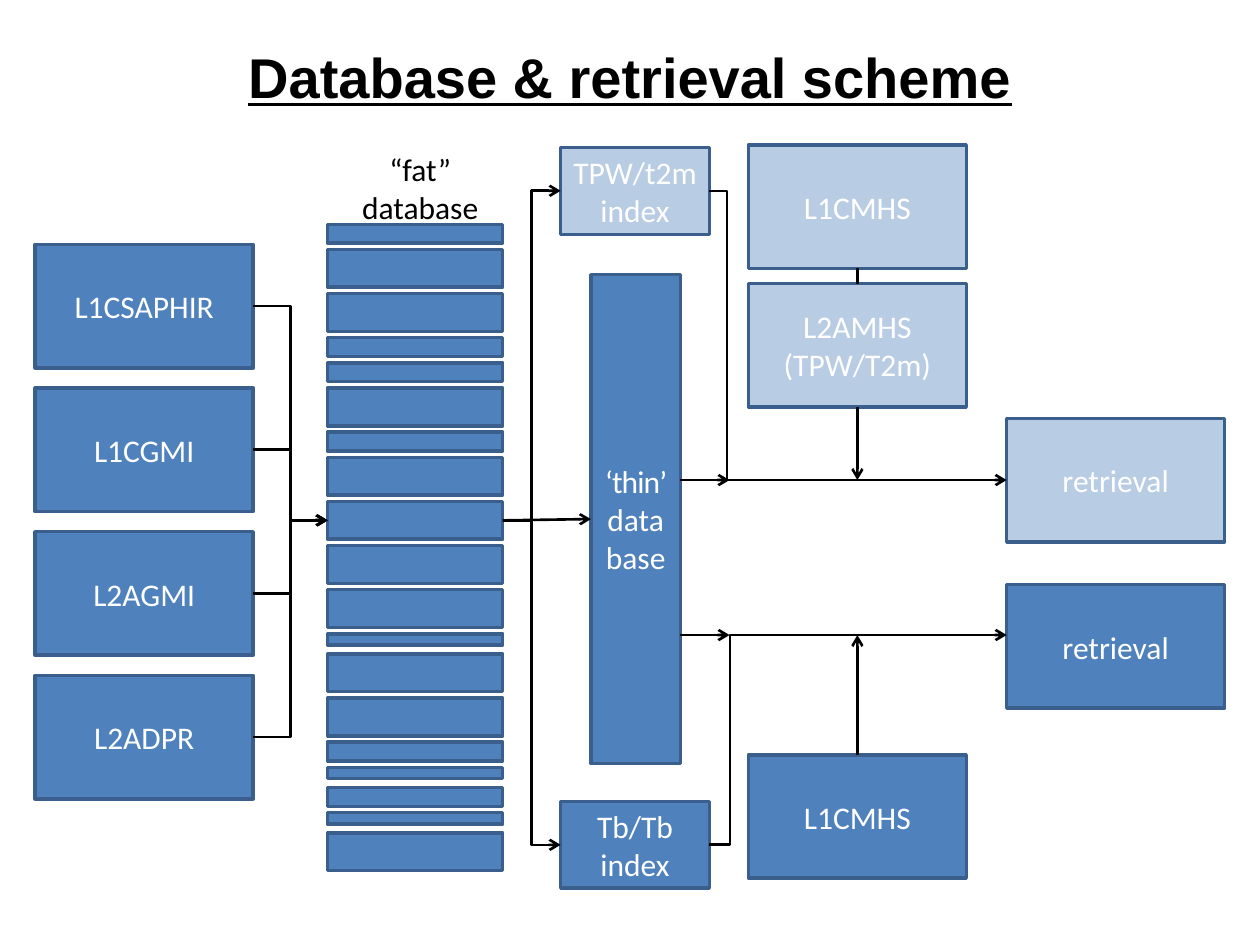
import lxml.etree
import pptx
import pptx.dml.color
import pptx.enum.shapes
import pptx.enum.text
import pptx.oxml.ns
import pptx.util

Inches = pptx.util.Inches
qn = pptx.oxml.ns.qn

BLUE = pptx.dml.color.RGBColor(0x4F, 0x81, 0xBD)
EDGE = pptx.dml.color.RGBColor(0x3A, 0x5F, 0x8C)
WHITE = pptx.dml.color.RGBColor(0xFF, 0xFF, 0xFF)
BLACK = pptx.dml.color.RGBColor(0x00, 0x00, 0x00)

TOP, LEFT, BOTTOM, RIGHT = range(4)
SIDE_POINTS = {TOP: (0.5, 0), LEFT: (0, 0.5), BOTTOM: (0.5, 1), RIGHT: (1, 0.5)}
BOX_WIDTH, BOX_HEIGHT = Inches(1.73), Inches(0.98)
ROW_PITCHES = {0.3: 0.35, 0.15: 0.2, 0.09: 0.16}
ROW_HEIGHTS = [0.15, 0.3, 0.3, 0.15, 0.15, 0.3, 0.15, 0.3, 0.3, 0.3,
               0.3, 0.09, 0.3, 0.3, 0.15, 0.09, 0.15, 0.09, 0.3]
MIDDLE_ROW = 8


def write_text(frame, text, size=18, font="Calibri", color=WHITE, bold=None,
               underline=None, tight_lead="", wrap=True,
               anchor=pptx.enum.text.MSO_ANCHOR.MIDDLE):
    """Write centred paragraphs, optionally led by a run with tighter spacing."""
    frame.word_wrap = wrap
    frame.vertical_anchor = anchor
    for index, line in enumerate(text.split("\n")):
        paragraph = frame.add_paragraph() if index else frame.paragraphs[0]
        paragraph.alignment = pptx.enum.text.PP_ALIGN.CENTER
        for part in filter(None, ("" if index else tight_lead, line)):
            run = paragraph.add_run()
            run.text = part
            run.font.size = pptx.util.Pt(size)
            run.font.name = font
            run.font.color.rgb = color
            run.font.bold = bold
            run.font.underline = underline
    if tight_lead:
        frame.paragraphs[0].runs[0].font._element.set("spc", "-50")


def add_box(slide, left, top, width, height, text="", faded=False, **text_format):
    """Add an outlined blue rectangle, faded to 40% opacity on request."""
    box = slide.shapes.add_shape(
        pptx.enum.shapes.MSO_SHAPE.RECTANGLE, left, top, width, height)
    box.shadow.inherit = False
    box.fill.solid()
    box.fill.fore_color.rgb = BLUE
    box.line.color.rgb = EDGE
    box.line.width = pptx.util.Pt(2)
    if faded:
        color = box._element.spPr.find(qn("a:solidFill")).find(qn("a:srgbClr"))
        lxml.etree.SubElement(color, qn("a:alpha")).set("val", "40000")
    if text:
        write_text(box.text_frame, text, **text_format)
    return box


def locate(end):
    """Return the point of an end given as (box, side) or as (x, y)."""
    if not hasattr(end[0], "text_frame"):
        return end
    box, side = end
    across, down = SIDE_POINTS[side]
    return int(box.left + box.width * across), int(box.top + box.height * down)


def add_link(slide, start, end, bend=None, arrow=True):
    """Link two ends with a straight line, or with an elbow turning at bend."""
    kinds = pptx.enum.shapes.MSO_CONNECTOR
    kind = kinds.STRAIGHT if bend is None else kinds.ELBOW
    link = slide.shapes.add_connector(kind, *locate(start), *locate(end))
    if hasattr(start[0], "text_frame"):
        link.begin_connect(*start)
    if hasattr(end[0], "text_frame"):
        link.end_connect(*end)
    link.line.color.rgb = BLACK
    link.line.width = pptx.util.Pt(1.5)
    properties = link._element.spPr
    if bend is not None:
        adjustments = properties.find(qn("a:prstGeom")).get_or_add_avLst()
        guide = lxml.etree.SubElement(adjustments, qn("a:gd"))
        guide.set("name", "adj1")
        guide.set("fmla", f"val {round(bend * 100000)}")
    if arrow:
        outline = properties.find(qn("a:ln"))
        lxml.etree.SubElement(outline, qn("a:tailEnd")).set("type", "arrow")
    lxml.etree.SubElement(properties, qn("a:effectLst"))


def add_title(slide, left, top, width, height):
    """Place the underlined heading."""
    title = slide.shapes.add_textbox(left, top, width, height)
    write_text(title.text_frame, "Database & retrieval scheme", size=32,
               font="Arial", color=BLACK, bold=True, underline=True)


def add_sources(slide, left, top):
    """Stack the input products and return their boxes."""
    products = ["L1CSAPHIR", "L1CGMI", "L2AGMI", "L2ADPR"]
    return [add_box(slide, left, top + Inches(1.14) * index,
                    BOX_WIDTH, BOX_HEIGHT, product)
            for index, product in enumerate(products)]


def add_fat_database(slide, left, top, width):
    """Stack the rows of the fat database under its label; return the middle row."""
    label = slide.shapes.add_textbox(
        left + Inches(0.17), top - Inches(0.64), Inches(1.13), Inches(0.71))
    write_text(label.text_frame, "“fat”\ndatabase", color=BLACK, wrap=False,
               anchor=pptx.enum.text.MSO_ANCHOR.TOP)
    rows = []
    for height in ROW_HEIGHTS:
        rows.append(add_box(slide, left, top, width, Inches(height)))
        top += Inches(ROW_PITCHES[height])
    return rows[MIDDLE_ROW]


def add_indexes(slide, left, top, width):
    """Place the thin database between its two indexes and return all three."""
    height = Inches(0.69)
    tpw_index = add_box(slide, left, top, width, height, "TPW/t2m index", faded=True)
    thin = add_box(slide, left + Inches(0.24), top + Inches(1.01), Inches(0.71),
                   Inches(3.88), "database", tight_lead="‘thin’ ")
    tb_index = add_box(slide, left, top + Inches(5.19), width, height, "Tb/Tb index")
    return tpw_index, thin, tb_index


def add_retrievals(slide, left, top):
    """Place the observations and the retrievals, with the links between them."""
    def place(across, down, text, faded=False):
        return add_box(slide, left + Inches(across), top + Inches(down),
                       BOX_WIDTH, BOX_HEIGHT, text, faded)

    first_observation = place(0, 0, "L1CMHS", True)
    ancillary = place(0, 1.1, "L2AMHS\n(TPW/T2m)", True)
    second_observation = place(0, 4.84, "L1CMHS")
    faded_retrieval = place(2.05, 2.17, "retrieval", True)
    place(2.05, 3.49, "retrieval")

    center = left + BOX_WIDTH // 2
    add_link(slide, (first_observation, BOTTOM), (ancillary, TOP), arrow=False)
    add_link(slide, (ancillary, BOTTOM), (center, top + Inches(2.66)))
    add_link(slide, (second_observation, TOP), (center, top + Inches(3.89)))
    return faded_retrieval


def main():
    """Build and save the scheme."""
    deck = pptx.Presentation()
    deck.slide_width, deck.slide_height = Inches(10), Inches(7.5)
    slide = deck.slides.add_slide(deck.slide_layouts[6])

    add_title(slide, Inches(0.5), Inches(0.21), Inches(9), Inches(0.79))
    sources = add_sources(slide, Inches(0.28), Inches(1.94))
    middle_row = add_fat_database(slide, Inches(2.6), Inches(1.78), Inches(1.39))
    tpw_index, thin, tb_index = add_indexes(
        slide, Inches(4.45), Inches(1.17), Inches(1.18))
    faded_retrieval = add_retrievals(slide, Inches(5.94), Inches(1.15))

    for source in sources:
        add_link(slide, (source, RIGHT), (middle_row, LEFT), bend=0.5)
    for index in (tb_index, tpw_index):
        add_link(slide, (middle_row, RIGHT), (index, LEFT), bend=0.5)
    add_link(slide, (middle_row, RIGHT), (thin, LEFT))

    upper, lower = Inches(3.81), Inches(5.04)
    add_link(slide, (tpw_index, RIGHT), (faded_retrieval, LEFT), bend=0.06)
    add_link(slide, (tb_index, RIGHT), (Inches(7.99), lower), bend=0.07)
    for level in (upper, lower):
        add_link(slide, (Inches(5.4), level), (Inches(5.79), level))

    deck.save("out.pptx")


if __name__ == "__main__":
    main()
